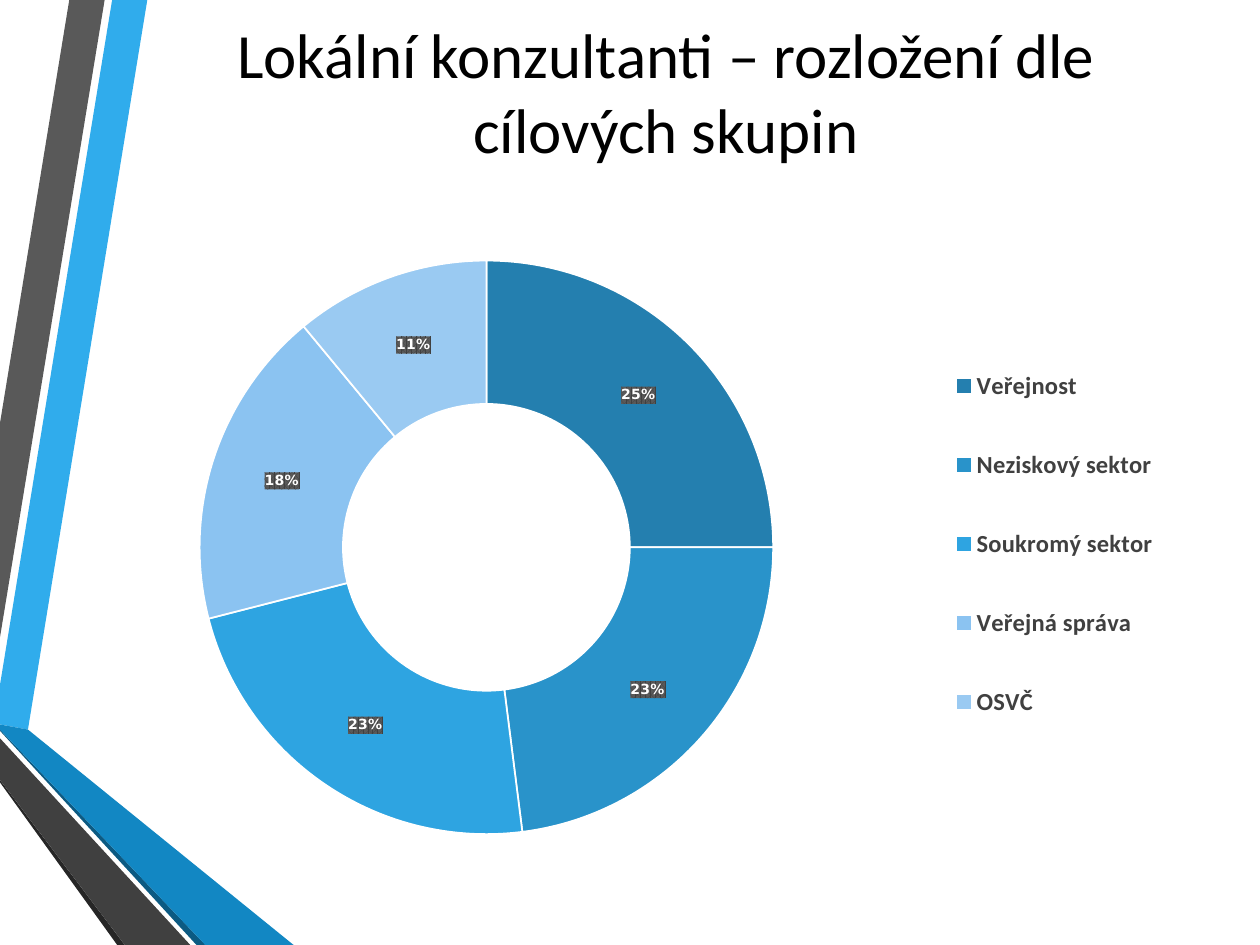
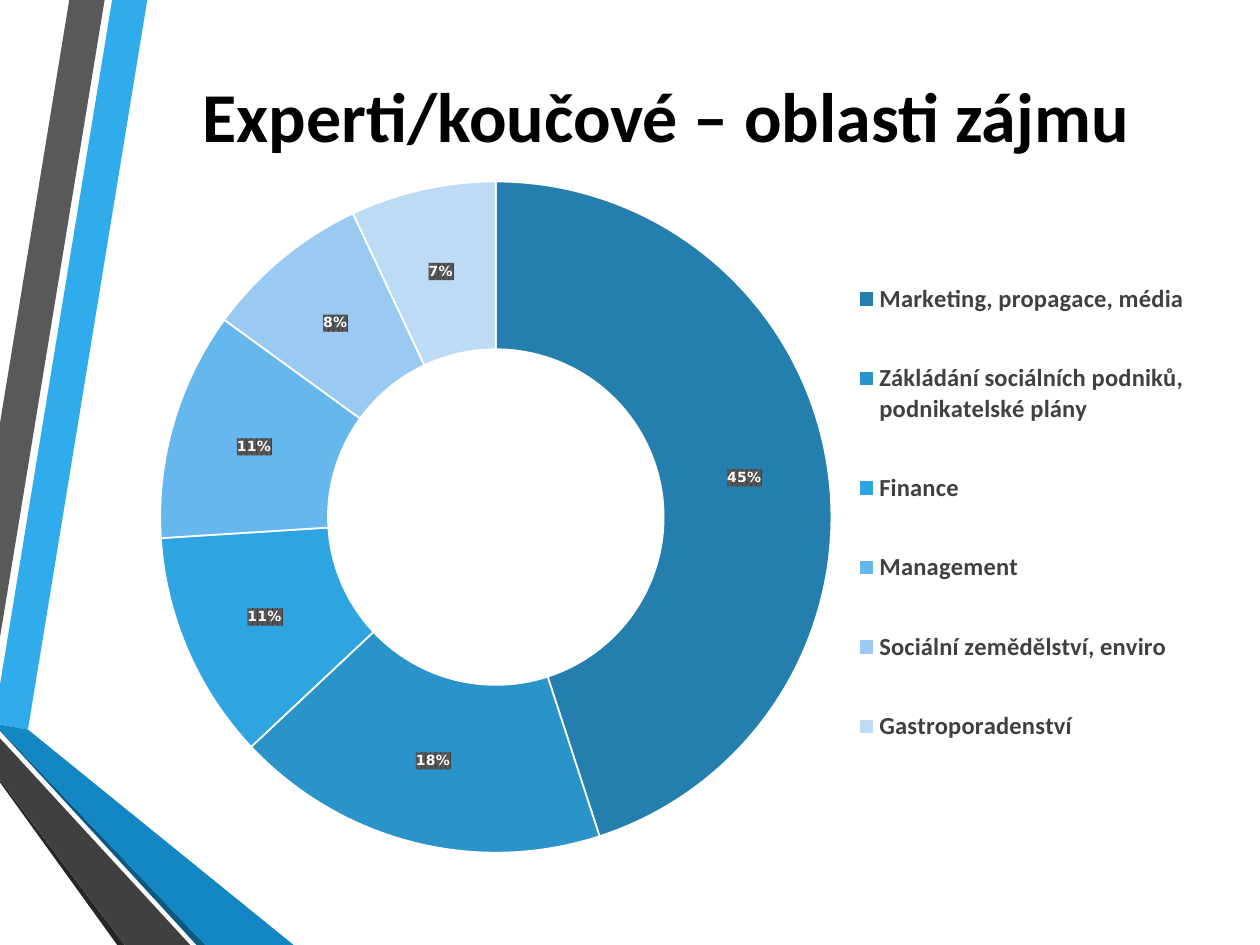
"""Two slides with doughnut charts about consultants and experts."""
from dataclasses import dataclass

from lxml.etree import SubElement
from pptx import Presentation
from pptx.chart.data import CategoryChartData
from pptx.dml.color import RGBColor
from pptx.enum.chart import XL_CHART_TYPE, XL_LEGEND_POSITION
from pptx.enum.text import MSO_ANCHOR, MSO_AUTO_SIZE, PP_ALIGN
from pptx.oxml import parse_xml
from pptx.oxml.ns import nsdecls, qn
from pptx.util import Pt


@dataclass(frozen=True)
class Theme:
    font: str = "Calibri"
    label_font: str = "DejaVu Sans"
    text: str = "000000"
    legend_text: str = "404040"
    white: str = "FFFFFF"
    label_dark: str = "404040"
    label_light: str = "595959"
    chart_size: int = 10
    legend_size: int = 14
    label_size: int = 8


THEME = Theme()

RIBBONS = [
    ("30ACEC", [(0, 391.5), (0, 414), (16, 416.9), (84.2, 0), (64.1, 0)]),
    ("595959", [(59.8, 0), (39.6, 0), (0, 241.9), (0, 364.3)]),
    ("262626", [(0, 445.7), (0, 447.1), (67, 540), (71.3, 540)]),
    ("0C5A82", [(0, 416.9), (0, 417.6), (112.3, 540), (117.4, 540)]),
    ("1287C3", [(0, 416.9), (117.4, 540), (167.8, 540), (16, 416.9), (0, 414)]),
    ("404040", [(0, 445.7), (71.3, 540), (108.7, 540), (0, 421.9)]),
]

SLIDES = [
    {
        "title": "Lokální konzultanti – rozložení dle cílových skupin",
        "title_box": (77, 15.1, 607, 73.4),
        "title_format": {"size": 36},
        "chart_box": (65.5, 111.6, 607, 402.5),
        "plot_area": (0.08, 0.09, 0.54, 0.82),
        "legend_area": (0.77, 0.18, 0.23, 0.63),
        "shares": [
            ("Veřejnost", 25, "247FAF"),
            ("Neziskový sektor", 23, "2993CA"),
            ("Soukromý sektor", 23, "2EA4E1"),
            ("Veřejná správa", 18, "8BC3F1"),
            ("OSVČ", 11, "9ACAF2"),
        ],
    },
    {
        "title": "Experti/koučové – oblasti zájmu",
        "title_box": (77, 36, 607, 58.3),
        "title_format": {"size": 40, "bold": True},
        "chart_box": (77, 43.2, 607, 504.7),
        "plot_area": (0.02, 0.12, 0.64, 0.76),
        "legend_area": (0.67, 0.18, 0.33, 0.63),
        "shares": [
            ("Marketing, propagace, média", 45, "247FAF"),
            ("Zákládání sociálních podniků, podnikatelské plány", 18, "2993CA"),
            ("Finance", 11, "2EA4E1"),
            ("Management", 11, "65B7EE"),
            ("Sociální zemědělství, enviro", 8, "9ACAF2"),
            ("Gastroporadenství", 7, "BEDBF6"),
        ],
    },
]


def format_font(font, size, color, bold=False, name=THEME.font):
    """Apply size, colour, weight and typeface to a font."""
    font.size, font.bold, font.name = Pt(size), bold, name
    font.color.rgb = RGBColor.from_string(color)


def set_text(shape, text, size, color=THEME.text, bold=False, align=PP_ALIGN.CENTER):
    """Write formatted text into a shape."""
    frame = shape.text_frame
    frame.word_wrap, frame.auto_size = True, MSO_AUTO_SIZE.NONE
    frame.vertical_anchor = MSO_ANCHOR.MIDDLE
    paragraph = frame.paragraphs[0]
    paragraph.alignment = align
    run = paragraph.add_run()
    run.text = text
    format_font(run.font, size, color, bold)


def add_ribbons(slide):
    """Draw the ribbons and hand them to the layout shared by all slides."""
    group = slide.shapes.add_group_shape()
    for color, points in RIBBONS:
        corners = [(Pt(x), Pt(y)) for x, y in points]
        builder = group.shapes.build_freeform(*corners[0])
        builder.add_line_segments(corners[1:], close=True)
        ribbon = builder.convert_to_shape()
        ribbon.shadow.inherit = False
        ribbon.fill.solid()
        ribbon.fill.fore_color.rgb = RGBColor.from_string(color)
        ribbon.line.fill.background()
    for number, properties in enumerate(group.element.iter(qn("p:cNvPr")), 100):
        properties.set("id", str(number))
    slide.slide_layout.shapes.element.append(group.element)


def place_part(part, position, area, target=None):
    """Give a chart part a manual layout in fractions of the chart."""
    for old_layout in part.findall(qn("c:layout")):
        part.remove(old_layout)
    layout = parse_xml(f"<c:layout {nsdecls('c')}/>")
    manual = SubElement(layout, qn("c:manualLayout"))
    settings = [("layoutTarget", target)] if target else []
    settings += [("xMode", "edge"), ("yMode", "edge"), *zip("xywh", area)]
    for tag, value in settings:
        SubElement(manual, qn(f"c:{tag}")).set("val", str(value))
    part.insert(position, layout)


def format_labels(series, chart):
    """Show percentages in white on a dark pattern."""
    labels = series.data_labels
    labels.show_percentage, labels.show_value = True, False
    labels.number_format, labels.number_format_is_linked = "0%", False
    format_font(labels.font, THEME.label_size, THEME.white, True, THEME.label_font)
    text_properties = chart.element.find(f".//{qn('c:ser')}/{qn('c:dLbls')}/{qn('c:txPr')}")
    text_properties.addprevious(parse_xml(
        f"<c:spPr {nsdecls('c', 'a')}><a:pattFill prst='pct75'>"
        f"<a:fgClr><a:srgbClr val='{THEME.label_dark}'/></a:fgClr>"
        f"<a:bgClr><a:srgbClr val='{THEME.label_light}'/></a:bgClr>"
        "</a:pattFill><a:ln><a:noFill/></a:ln></c:spPr>"))


def add_doughnut(slide, content):
    """Add the doughnut chart with its legend."""
    names, values, colors = zip(*content["shares"])
    data = CategoryChartData()
    data.categories = names
    data.add_series("Series 1", values)
    box = [Pt(length) for length in content["chart_box"]]
    chart = slide.shapes.add_chart(XL_CHART_TYPE.DOUGHNUT, *box, data).chart
    chart.has_title = False
    format_font(chart.font, THEME.chart_size, THEME.text)

    chart.plots[0].vary_by_categories = True
    series = chart.plots[0].series[0]
    for index, color in enumerate(colors):
        piece = series.points[index].format
        piece.fill.solid()
        piece.fill.fore_color.rgb = RGBColor.from_string(color)
        piece.line.color.rgb = RGBColor.from_string(THEME.white)
        piece.line.width = Pt(1)
    format_labels(series, chart)

    chart.has_legend = True
    chart.legend.position = XL_LEGEND_POSITION.RIGHT
    chart.legend.include_in_layout = False
    format_font(chart.legend.font, THEME.legend_size, THEME.legend_text, True)
    find = chart.element.find
    place_part(find(f".//{qn('c:plotArea')}"), 0, content["plot_area"], "inner")
    place_part(find(f".//{qn('c:legend')}"), 1, content["legend_area"])


def add_slide(presentation, content):
    """Add one slide with its title and chart."""
    slide = presentation.slides.add_slide(presentation.slide_layouts[5])
    title = slide.shapes.title
    title.left, title.top, title.width, title.height = map(Pt, content["title_box"])
    set_text(title, content["title"], **content["title_format"])
    add_doughnut(slide, content)
    return slide


def main():
    """Build and save the presentation."""
    presentation = Presentation()
    presentation.slide_width, presentation.slide_height = Pt(720), Pt(540)
    slides = [add_slide(presentation, content) for content in SLIDES]
    add_ribbons(slides[0])
    presentation.save("out.pptx")


if __name__ == "__main__":
    main()
